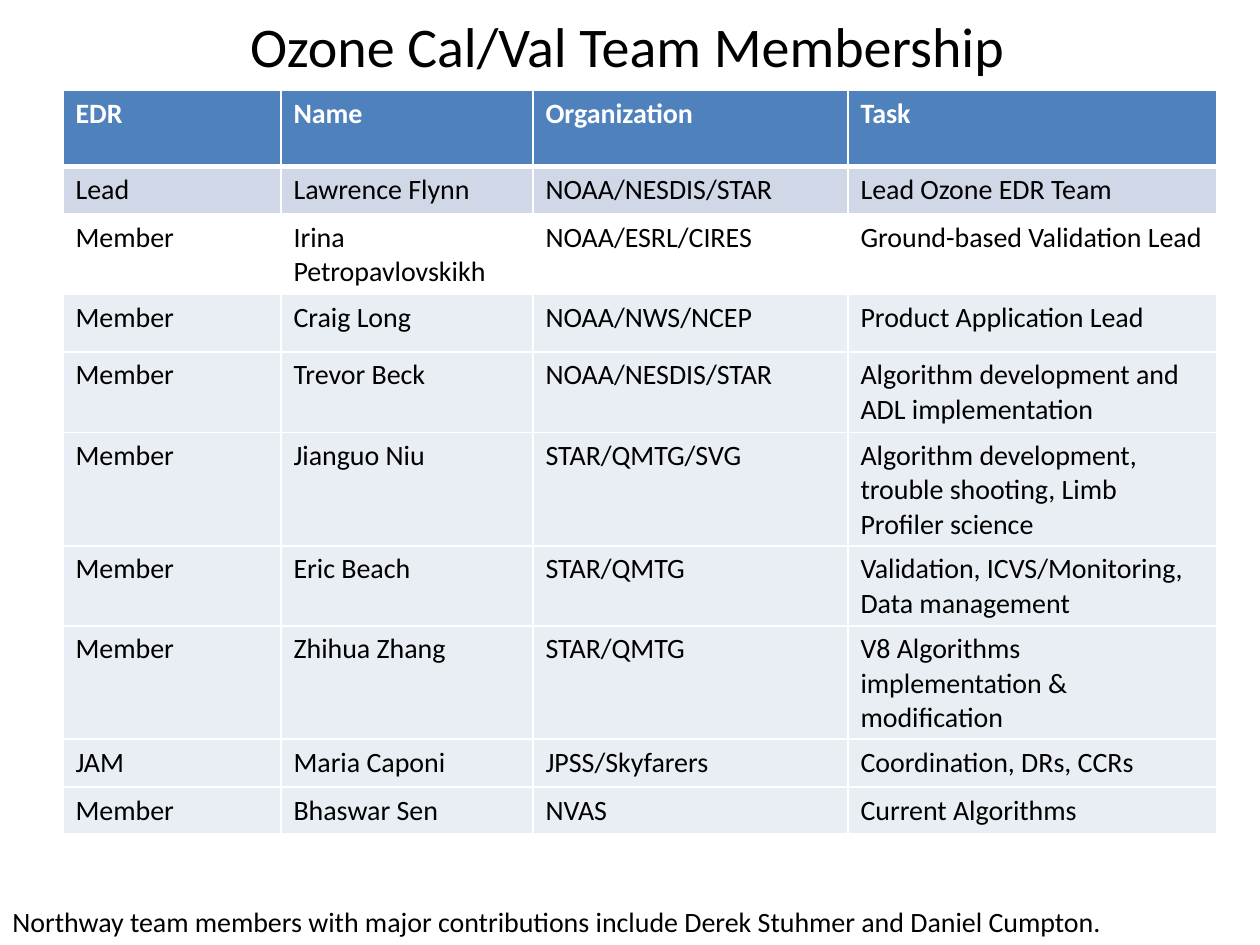
from lxml import etree
from pptx import Presentation
from pptx.dml.color import RGBColor
from pptx.enum.text import MSO_ANCHOR, PP_ALIGN
from pptx.oxml.ns import qn
from pptx.util import Inches, Pt

MIDDLE, TOP = MSO_ANCHOR.MIDDLE, MSO_ANCHOR.TOP
CENTER, LEFT = PP_ALIGN.CENTER, PP_ALIGN.LEFT
BLACK = RGBColor(0x00, 0x00, 0x00)
WHITE = RGBColor(0xFF, 0xFF, 0xFF)
BLUE = RGBColor(0x4F, 0x81, 0xBD)
BAND = RGBColor(0xD0, 0xD8, 0xE8)
PALE = RGBColor(0xE9, 0xED, 0xF4)

BODY = {"name": "Calibri", "size": Pt(16), "bold": False}
TITLE = BODY | {"size": Pt(32)}
HEADING = BODY | {"bold": True}

COLUMN_WIDTHS = [1.73, 2, 2.5, 2.93]
MEMBERS = [
    (0.6, BLUE, ["EDR", "Name", "Organization", "Task"]),
    (0.38, BAND, ["Lead", "Lawrence Flynn", "NOAA/NESDIS/STAR", "Lead Ozone EDR Team"]),
    (0.62, None, ["Member", "Irina Petropavlovskikh", "NOAA/ESRL/CIRES",
                  "Ground-based Validation Lead"]),
    (0.46, PALE, ["Member", "Craig Long", "NOAA/NWS/NCEP", "Product Application Lead"]),
    (0.64, PALE, ["Member", "Trevor Beck", "NOAA/NESDIS/STAR",
                  "Algorithm development and ADL implementation"]),
    (0.88, PALE, ["Member", "Jianguo Niu", "STAR/QMTG/SVG",
                  "Algorithm development, trouble shooting, Limb Profiler science"]),
    (0.62, PALE, ["Member", "Eric Beach", "STAR/QMTG",
                  "Validation, ICVS/Monitoring, Data management"]),
    (0.88, PALE, ["Member", "Zhihua Zhang", "STAR/QMTG",
                  "V8 Algorithms implementation & modification"]),
    (0.38, PALE, ["JAM", "Maria Caponi", "JPSS/Skyfarers", "Coordination, DRs, CCRs"]),
    (0.33, PALE, ["Member", "Bhaswar Sen", "NVAS", "Current Algorithms"]),
]


def write_text(frame, text, font_format, color, align=LEFT):
    para = frame.paragraphs[0]
    para.alignment = align
    span = para.add_run()
    span.text = text
    for key, value in font_format.items():
        setattr(span.font, key, value)
    span.font.color.rgb = color


def add_text(page, box, text, font_format, align, anchor):
    frame = page.shapes.add_textbox(*map(Inches, box)).text_frame
    frame.word_wrap = True
    frame.vertical_anchor = anchor
    write_text(frame, text, font_format, BLACK, align)


def set_borders(cell, widths):
    properties = cell._tc.get_or_add_tcPr()
    for position, (side, width) in enumerate(widths.items()):
        line = etree.Element(qn(f"a:{side}"), w=str(Pt(width)))
        fill = etree.SubElement(line, qn("a:solidFill"))
        etree.SubElement(fill, qn("a:srgbClr"), val=str(WHITE))
        properties.insert(position, line)


def add_members(page, box):
    table = page.shapes.add_table(
        len(MEMBERS), len(COLUMN_WIDTHS), *map(Inches, box)).table
    for column, width in zip(table.columns, COLUMN_WIDTHS):
        column.width = Inches(width)
    for row_number, (height, fill, texts) in enumerate(MEMBERS):
        table.rows[row_number].height = Inches(height)
        is_header = row_number == 0
        borders = {"lnL": 1, "lnR": 1, "lnT": 3 if row_number == 1 else 1,
                   "lnB": 3 if is_header else 1}
        for cell, text in zip(table.rows[row_number].cells, texts):
            if fill is None:
                cell.fill.background()
            else:
                cell.fill.solid()
                cell.fill.fore_color.rgb = fill
            set_borders(cell, borders)
            write_text(cell.text_frame, text, HEADING if is_header else BODY,
                       WHITE if is_header else BLACK)


def main():
    deck = Presentation()
    deck.slide_width, deck.slide_height = Inches(10), Inches(7.5)
    page = deck.slides.add_slide(deck.slide_layouts[6])
    add_text(page, (0.48, 0, 9, 0.71), "Ozone Cal/Val Team Membership",
             TITLE, CENTER, MIDDLE)
    add_members(page, (0.5, 0.72, 9.17, 5.9))
    add_text(page, (0, 7.13, 9.08, 0.37),
             "Northway team members with major contributions include "
             "Derek Stuhmer and Daniel Cumpton.", BODY, LEFT, TOP)
    deck.save("out.pptx")


if __name__ == "__main__":
    main()
